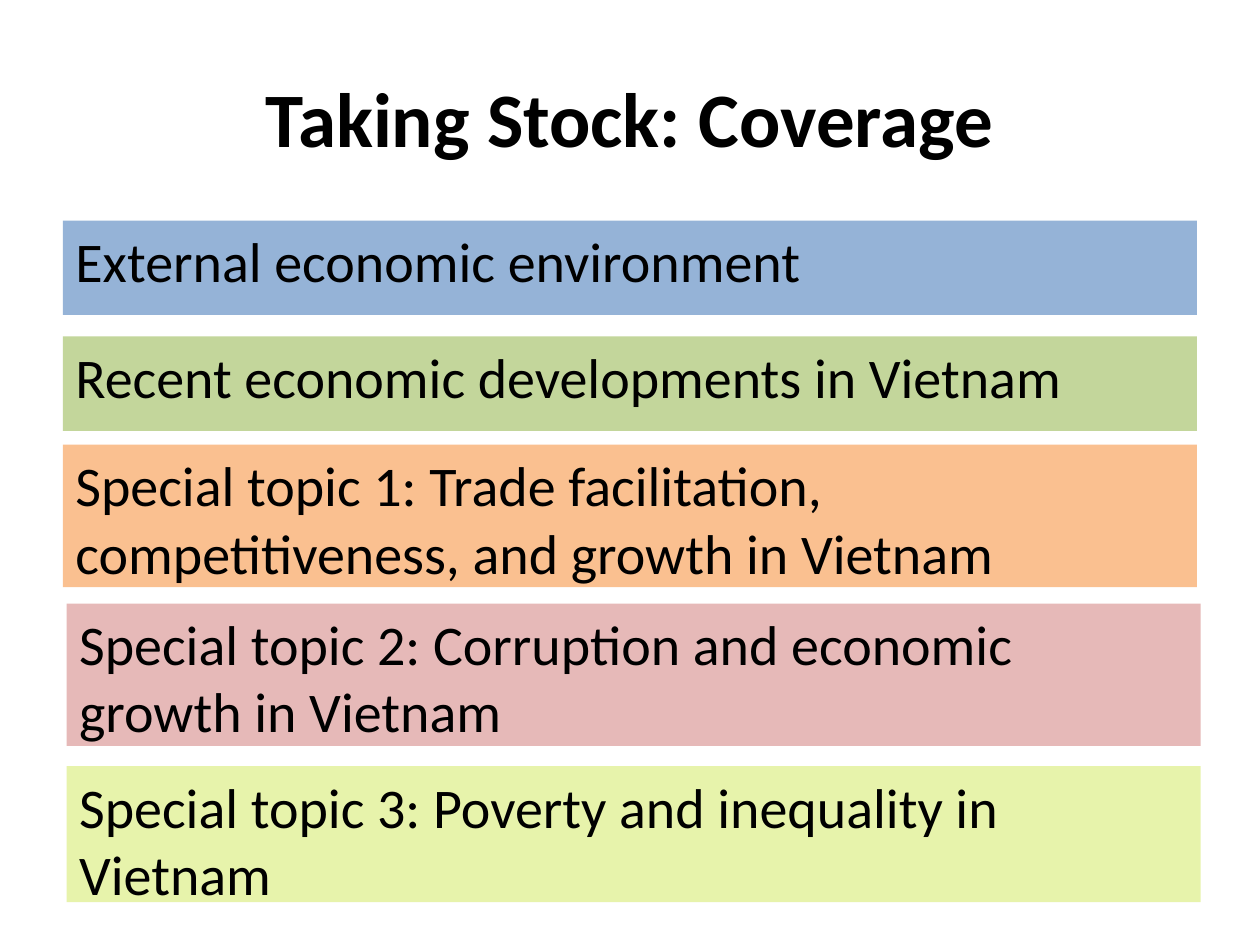
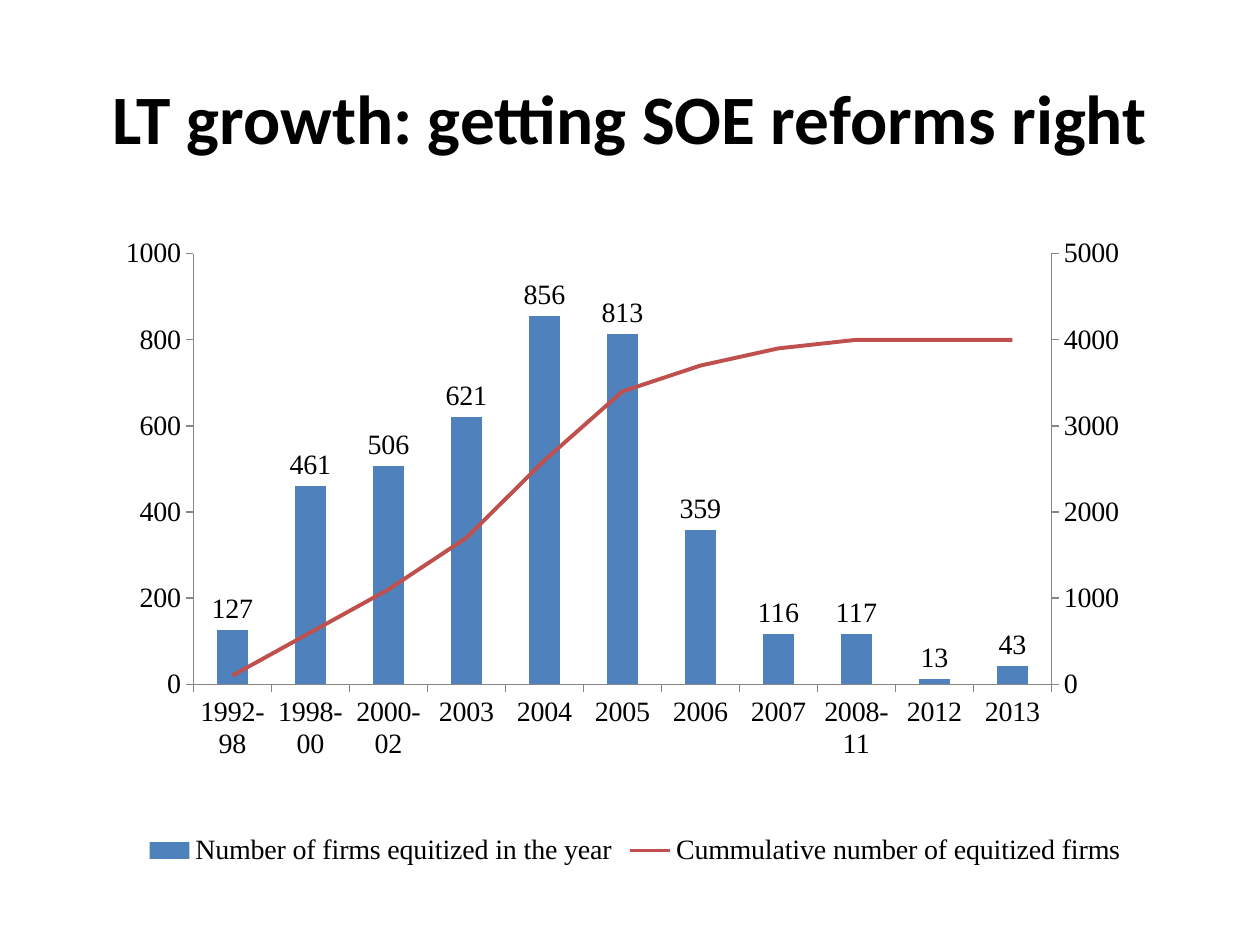
from copy import deepcopy
from dataclasses import dataclass
from itertools import accumulate

from lxml import etree
from pptx import Presentation
from pptx import util as u
from pptx.chart import axis as axes
from pptx.chart import data as chart_data
from pptx.dml import color
from pptx.enum import chart as chart_enum, shapes, text
from pptx.oxml import ns

COLORS = {
    "text": "000000", "axis": "868686", "bars": "4F81BD", "line": "C0504D",
    "blue": "95B3D7", "green": "C3D69B", "orange": "FAC090",
    "rose": "E6B9B8", "lime": "E7F3AB",
}
TITLE_FONT = {"name": "Calibri", "bold": True}
TOPIC_FONT = {"name": "Calibri", "size": u.Pt(32)}
CHART_FONT = {"name": "Times New Roman", "size": u.Pt(16)}
AXIS_FORMAT = {
    "has_major_gridlines": False,
    "major_tick_mark": chart_enum.XL_TICK_MARK.OUTSIDE,
    "minor_tick_mark": chart_enum.XL_TICK_MARK.NONE,
}
SCALE_LEFT = {"minimum_scale": 0, "maximum_scale": 1000, "major_unit": 200}
SCALE_RIGHT = {"minimum_scale": 0, "maximum_scale": 5000, "major_unit": 1000}
PLOT_LAYOUT = {"x": 0.114, "y": 0.051, "w": 0.75, "h": 0.661}
WIDTH = u.Inches(9)


@dataclass
class Topic:
    label: str
    fill: str
    top: float
    height: float
    left: float = 0.5


TOPICS = [
    Topic("External economic environment", "blue", 1.75, 0.75),
    Topic("Recent economic developments in Vietnam", "green", 2.67, 0.75),
    Topic("Special topic 1: Trade facilitation, competitiveness, and growth in Vietnam",
          "orange", 3.53, 1.13),
    Topic("Special topic 2: Corruption and economic growth in Vietnam",
          "rose", 4.79, 1.13, 0.53),
    Topic("Special topic 3: Poverty and inequality in Vietnam",
          "lime", 6.08, 1.08, 0.53),
]

FIRMS_EQUITIZED = {
    "1992-98": 127, "1998-00": 461, "2000-02": 506, "2003": 621, "2004": 856,
    "2005": 813, "2006": 359, "2007": 116, "2008-11": 117, "2012": 13, "2013": 43,
}


def rgb(name: str) -> color.RGBColor:
    return color.RGBColor.from_string(COLORS[name])


def apply(target, values: dict) -> None:
    for name, value in values.items():
        setattr(target, name, value)


def style_font(font, values: dict) -> None:
    apply(font, values)
    font.color.rgb = rgb("text")


def write(shape, wording: str, font: dict, anchor, alignment) -> None:
    frame = shape.text_frame
    apply(frame, {"word_wrap": True, "vertical_anchor": anchor})
    paragraph = frame.paragraphs[0]
    paragraph.alignment = alignment
    run = paragraph.add_run()
    run.text = wording
    style_font(run.font, font)


def add_titled_slide(presentation, title: str, size: float):
    slide = presentation.slides.add_slide(presentation.slide_layouts[6])
    box = slide.shapes.add_textbox(u.Inches(0.5), u.Inches(0.3), WIDTH, u.Inches(1.25))
    write(box, title, {**TITLE_FONT, "size": u.Pt(size)},
          text.MSO_ANCHOR.MIDDLE, text.PP_ALIGN.CENTER)
    return slide


def add_topic(slide, topic: Topic) -> None:
    shape = slide.shapes.add_shape(
        shapes.MSO_SHAPE.RECTANGLE, u.Inches(topic.left), u.Inches(topic.top),
        WIDTH, u.Inches(topic.height))
    shape.shadow.inherit = False
    shape.fill.solid()
    shape.fill.fore_color.rgb = rgb(topic.fill)
    shape.line.fill.background()
    write(shape, topic.label, TOPIC_FONT, text.MSO_ANCHOR.TOP, text.PP_ALIGN.LEFT)


def chart_element(parent, tag: str, value=None):
    element = etree.SubElement(parent, ns.qn(f"c:{tag}"))
    if value is not None:
        element.set("val", str(value))
    return element


def set_plot_layout(plot_area) -> None:
    for old in plot_area.findall(ns.qn("c:layout")):
        plot_area.remove(old)
    layout = chart_element(plot_area, "layout")
    plot_area.insert(0, layout)
    manual = chart_element(layout, "manualLayout")
    for tag, value in {"layoutTarget": "inner", "xMode": "edge", "yMode": "edge",
                       **PLOT_LAYOUT}.items():
        chart_element(manual, tag, value)


def move_to_right_axis(plot_area) -> None:
    """Turn the second column series into a line on its own axes."""
    bars = plot_area.find(ns.qn("c:barChart"))
    series = bars.findall(ns.qn("c:ser"))[1]
    for flag in series.findall(ns.qn("c:invertIfNegative")):
        series.remove(flag)
    line_chart = chart_element(plot_area, "lineChart")
    bars.addnext(line_chart)
    chart_element(line_chart, "grouping", "standard")
    chart_element(line_chart, "varyColors", 0)
    line_chart.append(series)
    chart_element(line_chart, "marker", 1)

    category_id, value_id = "50010", "50020"
    for axis_id in (category_id, value_id):
        chart_element(line_chart, "axId", axis_id)
    last = plot_area.find(ns.qn("c:valAx"))
    for tag, own, other in (("valAx", value_id, category_id),
                            ("catAx", category_id, value_id)):
        axis = deepcopy(plot_area.find(ns.qn(f"c:{tag}")))
        axis.find(ns.qn("c:axId")).set("val", own)
        axis.find(ns.qn("c:crossAx")).set("val", other)
        last.addnext(axis)
        last = axis
        if tag == "valAx":
            axis.find(ns.qn("c:axPos")).set("val", "r")
            axis.find(ns.qn("c:crosses")).set("val", "max")
            apply(axes.ValueAxis(axis), SCALE_RIGHT)
        else:
            axes.CategoryAxis(axis).visible = False


def add_equitization_chart(slide) -> None:
    data = chart_data.CategoryChartData(number_format="General")
    data.categories = list(FIRMS_EQUITIZED)
    yearly = list(FIRMS_EQUITIZED.values())
    totals = [round(total, -2) for total in accumulate(yearly)]
    data.add_series("Number of firms equitized in the year", yearly)
    data.add_series("Cummulative number of equitized firms", totals)
    chart = slide.shapes.add_chart(
        chart_enum.XL_CHART_TYPE.COLUMN_CLUSTERED, u.Inches(0.5), u.Inches(1.75),
        u.Inches(9.08), u.Inches(5.17), data).chart
    apply(chart, {"has_title": False, "has_legend": True})
    style_font(chart.font, CHART_FONT)
    apply(chart.legend, {"position": chart_enum.XL_LEGEND_POSITION.BOTTOM,
                         "include_in_layout": False})

    # Axes
    for axis in (chart.category_axis, chart.value_axis):
        apply(axis, AXIS_FORMAT)
        axis.format.line.color.rgb = rgb("axis")
        axis.format.line.width = u.Pt(0.75)
    apply(chart.value_axis, SCALE_LEFT)
    plot_area = chart.value_axis._element.getparent()
    set_plot_layout(plot_area)
    move_to_right_axis(plot_area)

    # Columns with values, and the cumulative line
    columns, line_plot = chart.plots
    apply(columns, {"gap_width": 150, "vary_by_categories": False})
    yearly_series, cumulative = columns.series[0], line_plot.series[0]
    yearly_series.format.fill.solid()
    yearly_series.format.fill.fore_color.rgb = rgb("bars")
    labels = yearly_series.data_labels
    apply(labels, {"show_value": True,
                   "position": chart_enum.XL_LABEL_POSITION.OUTSIDE_END})
    style_font(labels.font, CHART_FONT)
    cumulative.smooth = False
    cumulative.marker.style = chart_enum.XL_MARKER_STYLE.NONE
    cumulative.format.line.color.rgb = rgb("line")
    cumulative.format.line.width = u.Pt(2.25)


def main() -> None:
    presentation = Presentation()
    apply(presentation, {"slide_width": u.Inches(10), "slide_height": u.Inches(7.5)})

    # Slide 1: coverage
    coverage = add_titled_slide(presentation, "Taking Stock: Coverage", 44)
    for topic in TOPICS:
        add_topic(coverage, topic)

    # Slide 2: reforms
    reforms = add_titled_slide(presentation, "LT growth: getting SOE reforms right", 39.6)
    add_equitization_chart(reforms)

    presentation.save("out.pptx")


if __name__ == "__main__":
    main()
